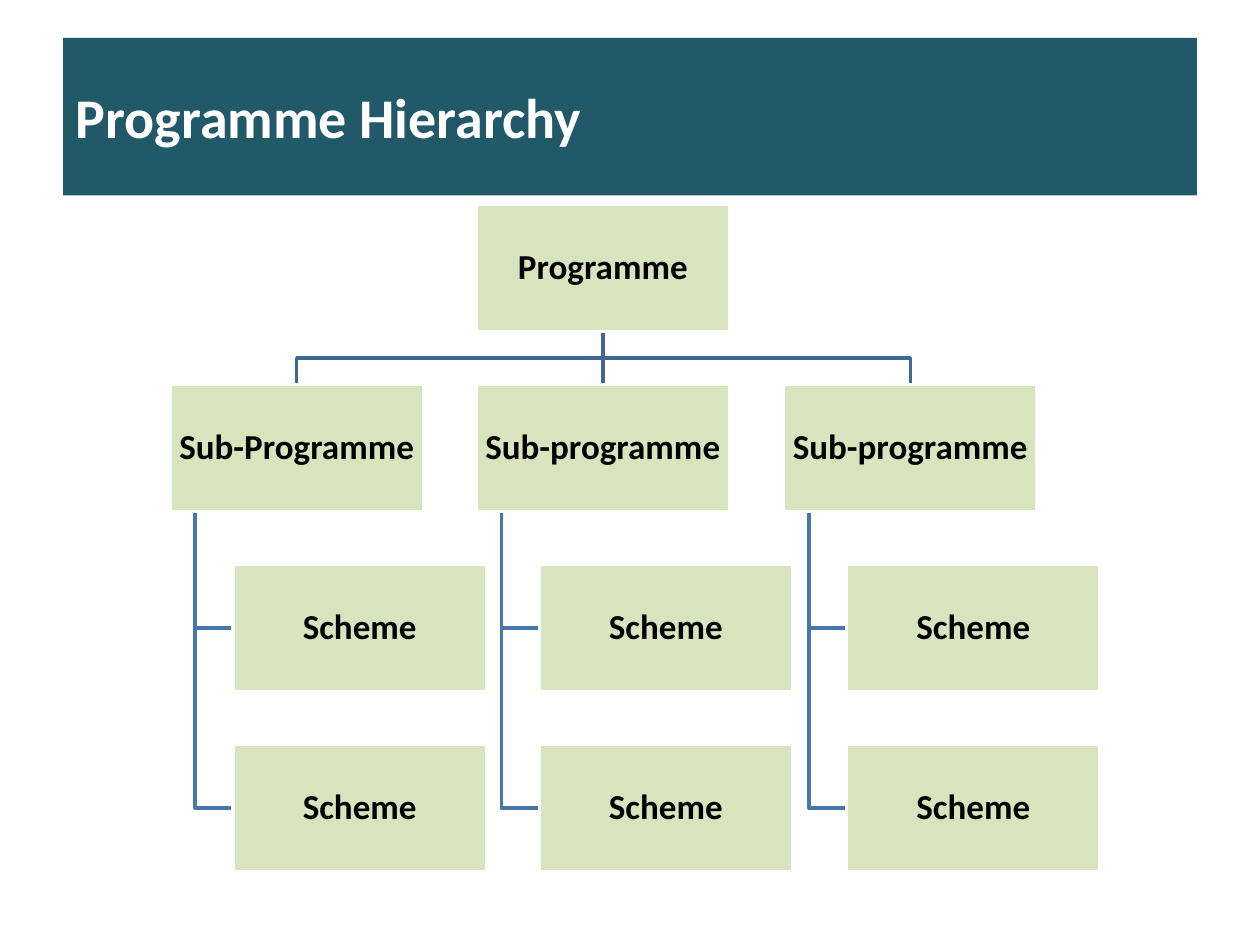
"""Build the programme hierarchy slide."""
import pptx
import pptx.dml.color
import pptx.enum.shapes
import pptx.enum.text
import pptx.oxml
import pptx.util
from pptx.util import Inches


def color(hex_text):
    return pptx.dml.color.RGBColor.from_string(hex_text)


def style_text(shape, text, size, hex_text, alignment):
    frame = shape.text_frame
    frame.text = text
    frame.word_wrap = True
    frame.vertical_anchor = pptx.enum.text.MSO_ANCHOR.MIDDLE
    para = frame.paragraphs[0]
    para.alignment = alignment
    font = para.runs[0].font
    font.name = "Calibri"
    font.size = pptx.util.Pt(size)
    font.bold = True
    font.color.rgb = color(hex_text)


deck = pptx.Presentation()
deck.slide_width = Inches(10)
deck.slide_height = Inches(7.5)
slide = deck.slides.add_slide(deck.slide_layouts[5])
shapes = slide.shapes

title = shapes.title
title.left, title.top = Inches(0.5), Inches(0.3)
title.width, title.height = Inches(9), Inches(1.25)
title.fill.solid()
title.fill.fore_color.rgb = color("215968")
style_text(title, "Programme Hierarchy", 32, "FFFFFF", pptx.enum.text.PP_ALIGN.LEFT)

box_width, box_height = 2.01, 1.01
row_tops = [1.62 + 1.43 * row for row in range(4)]
column_lefts = [1.35, 3.78, 6.22]
sub_names = ["Sub-Programme", "Sub-programme", "Sub-programme"]
scheme_indent = 0.5
trunk_indent = 0.2
root_left = column_lefts[1]
root_center = root_left + box_width / 2
root_bottom = row_tops[0] + box_height
sub_top = row_tops[1]
sub_bottom = sub_top + box_height
branch_y = (root_bottom + sub_top) / 2

boxes = [("Programme", root_left, row_tops[0])]
branches = []
for name, left in zip(sub_names, column_lefts):
    boxes.append((name, left, sub_top))
    center = left + box_width / 2
    if left != root_left:
        branches.append(("3F6797", [(root_center, root_bottom), (root_center, branch_y),
                                    (center, branch_y), (center, sub_top)]))
    for top in row_tops[2:]:
        boxes.append(("Scheme", left + scheme_indent, top))
        trunk_x, middle = left + trunk_indent, top + box_height / 2
        branches.append(("4875AC", [(trunk_x, sub_bottom), (trunk_x, middle),
                                    (left + scheme_indent, middle)]))

for line_color, points in branches:
    start, *others = [(Inches(x), Inches(y)) for x, y in points]
    builder = shapes.build_freeform(*start)
    builder.add_line_segments(others, close=False)
    branch = builder.convert_to_shape()
    branch.shadow.inherit = False
    branch.fill.background()
    branch.line.color.rgb = color(line_color)
    branch.line.width = pptx.util.Pt(2)

stem = shapes.add_connector(
    pptx.enum.shapes.MSO_CONNECTOR.STRAIGHT,
    Inches(root_center), Inches(root_bottom), Inches(root_center), Inches(sub_top))
stem.line.color.rgb = color("3F6797")
stem.line.width = pptx.util.Pt(2)
stem.element.spPr.append(pptx.oxml.parse_xml(
    '<a:effectLst xmlns:a="http://schemas.openxmlformats.org/drawingml/2006/main"/>'))

for name, left, top in boxes:
    box = shapes.add_shape(
        pptx.enum.shapes.MSO_SHAPE.RECTANGLE,
        Inches(left), Inches(top), Inches(box_width), Inches(box_height))
    box.shadow.inherit = False
    box.fill.solid()
    box.fill.fore_color.rgb = color("D7E4BD")
    box.line.color.rgb = color("FFFFFF")
    box.line.width = pptx.util.Pt(2)
    style_text(box, name, 20, "000000", pptx.enum.text.PP_ALIGN.CENTER)
    frame = box.text_frame
    frame.margin_left = frame.margin_right = Inches(0.01)
    frame.margin_top = frame.margin_bottom = Inches(0.01)
    frame.paragraphs[0].line_spacing = 0.9
    if left == root_left and top == row_tops[0]:
        stem.begin_connect(box, 2)
    elif left == root_left and top == sub_top:
        stem.end_connect(box, 0)

deck.save("out.pptx")
